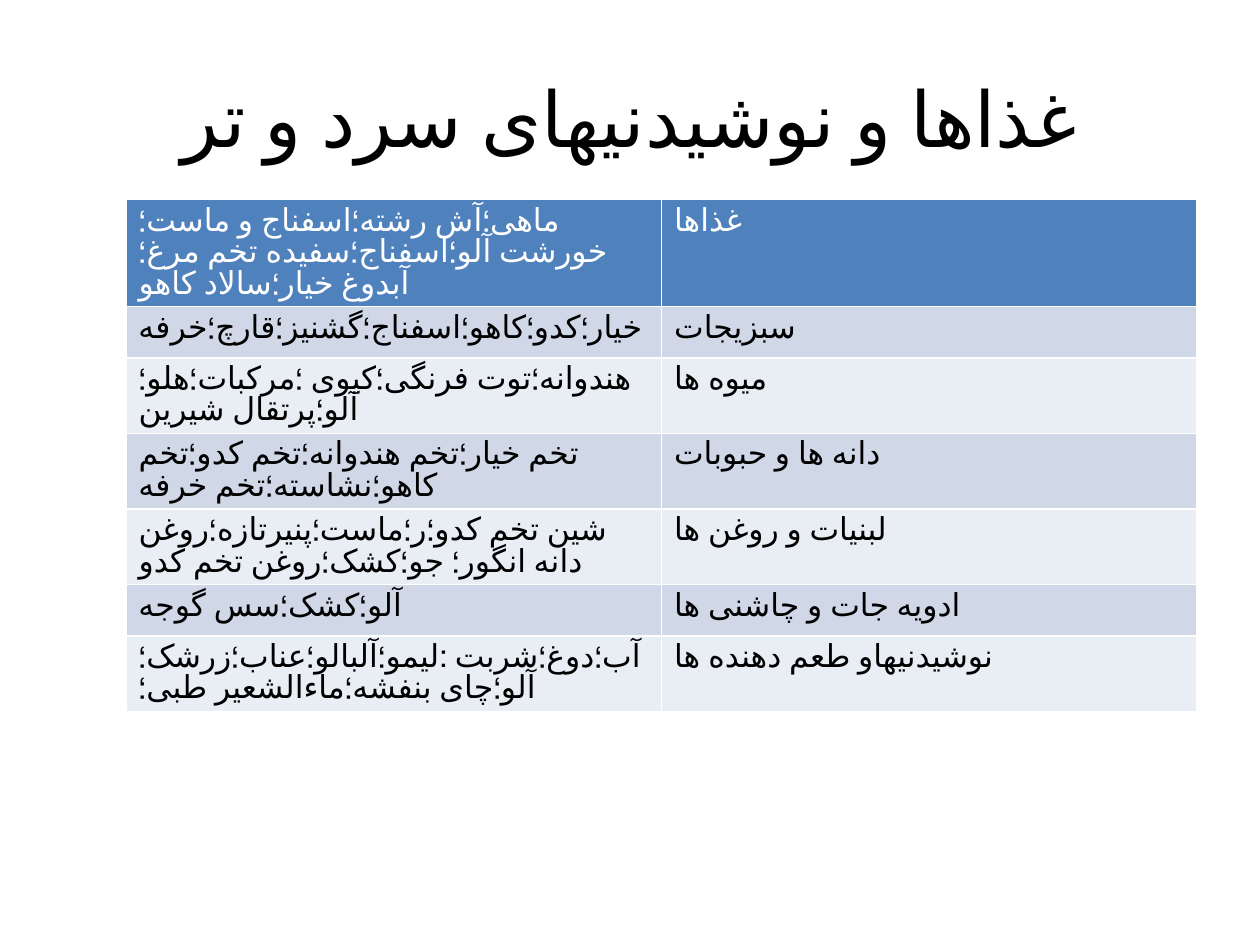
from pptx import Presentation
from pptx.dml.color import RGBColor
from pptx.enum.lang import MSO_LANGUAGE_ID
from pptx.enum.text import MSO_ANCHOR, PP_ALIGN
from pptx.util import Pt

FONT = "Calibri"
COLORS = {
    "head": "4F81BD",
    "odd": "D0D8E8",
    "even": "E9EDF4",
    "white": "FFFFFF",
    "black": "000000",
}
FOODS = [
    ("ماهی؛آش رشته؛اسفناج و ماست؛خورشت آلو؛اسفناج؛سفیده تخم مرغ؛آبدوغ خیار؛سالاد کاهو", "غذاها"),
    ("خیار؛کدو؛کاهو؛اسفناج؛گشنیز؛قارچ؛خرفه", "سبزیجات"),
    ("هندوانه؛توت فرنگی؛کیوی ؛مرکبات؛هلو؛آلو؛پرتقال شیرین", "میوه ها"),
    ("تخم خیار؛تخم هندوانه؛تخم کدو؛تخم کاهو؛نشاسته؛تخم خرفه", "دانه ها و حبوبات"),
    ("شین تخم کدو؛ر؛ماست؛پنیرتازه؛روغن دانه انگور؛ جو؛کشک؛روغن تخم کدو", "لبنیات و روغن ها"),
    ("آلو؛کشک؛سس گوجه", "ادویه جات و چاشنی ها"),
    ("آب؛دوغ؛شربت :لیمو؛آلبالو؛عناب؛زرشک؛آلو؛چای بنفشه؛ماءالشعیر طبی؛", "نوشیدنیهاو طعم دهنده ها"),
]


def set_font(para, size, color):
    """Format the paragraph and mark its runs as Persian."""
    para.font.name = FONT
    para.font.size = Pt(size)
    para.font.bold = False
    para.font.color.rgb = RGBColor.from_string(COLORS[color])
    for run in para.runs:
        run.font.language_id = MSO_LANGUAGE_ID.FARSI


deck = Presentation()
deck.slide_width, deck.slide_height = Pt(720), Pt(540)
slide = deck.slides.add_slide(deck.slide_layouts.get_by_name("Title Only"))

title = slide.shapes.title
title.left, title.top, title.width, title.height = Pt(36), Pt(21.6), Pt(648), Pt(90)
title.text_frame.text = "غذاها و نوشیدنیهای سرد و تر"
title.text_frame.vertical_anchor = MSO_ANCHOR.MIDDLE
heading = title.text_frame.paragraphs[0]
heading.alignment = PP_ALIGN.CENTER
set_font(heading, 44, "black")

# Rows start at one line high and grow with their text.
row_high = 29.2
table = slide.shapes.add_table(
    len(FOODS), 2, Pt(72), Pt(114), Pt(612), Pt(row_high * len(FOODS))
).table
for r, texts in enumerate(FOODS):
    table.rows[r].height = Pt(row_high)
    band = "head" if r == 0 else "odd" if r % 2 else "even"
    for c, text in enumerate(texts):
        cell = table.cell(r, c)
        cell.text = text
        cell.fill.solid()
        cell.fill.fore_color.rgb = RGBColor.from_string(COLORS[band])
        para = cell.text_frame.paragraphs[0]
        para.alignment = PP_ALIGN.LEFT
        set_font(para, 18, "white" if r == 0 else "black")

deck.save("out.pptx")
